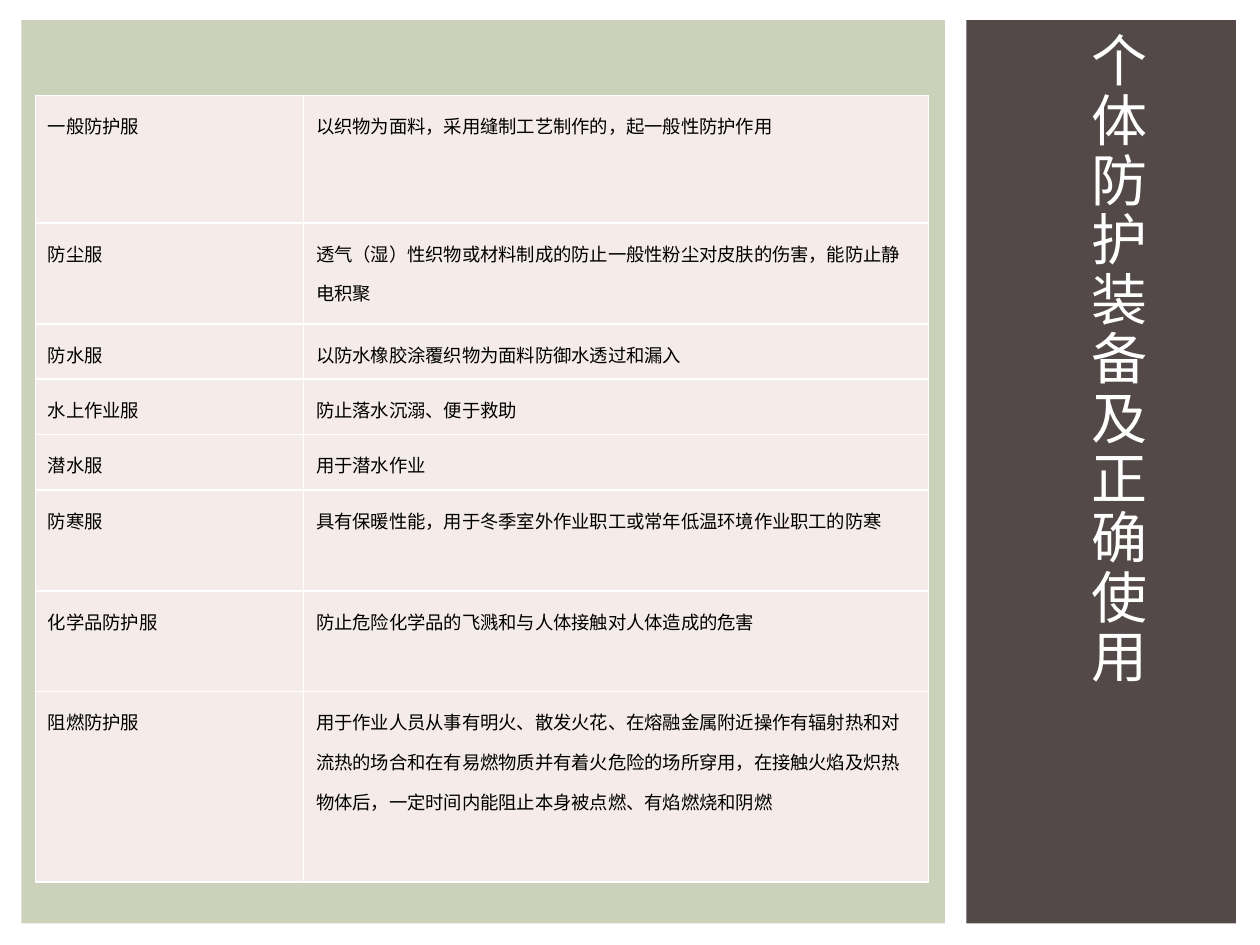
import pptx
import pptx.dml.color
import pptx.enum.shapes
import pptx.enum.text
import pptx.oxml
import pptx.oxml.ns
import pptx.util
from dataclasses import dataclass
from pptx.util import Inches


@dataclass(frozen=True)
class Theme:
    font: str = "Lato"
    title_size: float = 32
    cell_size: float = 10.5
    sage: str = "CCD1B9"
    brown: str = "534949"
    blush: str = "F5EBE9"
    white: str = "FFFFFF"
    black: str = "000000"


theme = Theme()


def rgb(value):
    return pptx.dml.color.RGBColor.from_string(value)


def add_borders(cell):
    """Draw a thin white line on all four sides, ahead of the cell's fill."""
    properties = cell._tc.get_or_add_tcPr()
    for index, side in enumerate(("lnL", "lnR", "lnT", "lnB")):
        properties.insert(index, pptx.oxml.parse_xml(
            f'<a:{side} {pptx.oxml.ns.nsdecls("a")} w="12700"><a:solidFill>'
            f'<a:srgbClr val="{theme.white}"/></a:solidFill></a:{side}>'))


clothing = [
    ("一般防护服", "以织物为面料，采用缝制工艺制作的，起一般性防护作用", 1.01),
    ("防尘服", "透气（湿）性织物或材料制成的防止一般性粉尘对皮肤的伤害，能防止静电积聚", 0.8),
    ("防水服", "以防水橡胶涂覆织物为面料防御水透过和漏入", 0.44),
    ("水上作业服", "防止落水沉溺、便于救助", 0.44),
    ("潜水服", "用于潜水作业", 0.44),
    ("防寒服", "具有保暖性能，用于冬季室外作业职工或常年低温环境作业职工的防寒", 0.8),
    ("化学品防护服", "防止危险化学品的飞溅和与人体接触对人体造成的危害", 0.8),
    ("阻燃防护服", "用于作业人员从事有明火、散发火花、在熔融金属附近操作有辐射热和对流热的场合"
     "和在有易燃物质并有着火危险的场所穿用，在接触火焰及炽热物体后，"
     "一定时间内能阻止本身被点燃、有焰燃烧和阴燃", 1.51),
]

deck = pptx.Presentation()
deck.slide_width, deck.slide_height = Inches(10), Inches(7.5)
slide = deck.slides.add_slide(deck.slide_layouts[5])

# Background panels
for left, width, color in ((0.17, 7.33, theme.sage), (7.67, 2.14, theme.brown)):
    panel = slide.shapes.add_shape(
        pptx.enum.shapes.MSO_SHAPE.RECTANGLE,
        Inches(left), Inches(0.16), Inches(width), Inches(7.17))
    panel.shadow.inherit = False
    panel.fill.solid()
    panel.fill.fore_color.rgb = rgb(color)
    panel.line.fill.background()

# Table of protective clothing
clothing_frame = slide.shapes.add_table(
    len(clothing), 2, Inches(0.28), Inches(0.76), Inches(7.09), Inches(6.25))
clothing_table = clothing_frame.table
clothing_table.first_row = False
clothing_table.horz_banding = False
for column, width in zip(clothing_table.columns, (2.13, 4.96)):
    column.width = Inches(width)

for row, (garment, purpose, height) in zip(clothing_table.rows, clothing):
    row.height = Inches(height)
    for cell, wording in zip(row.cells, (garment, purpose)):
        cell.text = wording
        cell.margin_left = cell.margin_right = Inches(0.1)
        cell.margin_top = cell.margin_bottom = Inches(0.03)
        cell.fill.solid()
        cell.fill.fore_color.rgb = rgb(theme.blush)
        add_borders(cell)
        paragraph = cell.text_frame.paragraphs[0]
        paragraph.line_spacing = 1.5
        paragraph.font.name = theme.font
        paragraph.font.size = pptx.util.Pt(theme.cell_size)
        paragraph.font.color.rgb = rgb(theme.black)

# Vertical title, brought in front of its panel
title = slide.shapes.title
slide.shapes._spTree.append(title._element)
title.left, title.top = Inches(7.68), Inches(0.21)
title.width, title.height = Inches(1.83), Inches(6.4)
title.text = "个体防护装备及正确使用"
title_frame = title.text_frame
title_frame.word_wrap = True
title_frame.auto_size = pptx.enum.text.MSO_AUTO_SIZE.NONE
title_frame.vertical_anchor = pptx.enum.text.MSO_ANCHOR.MIDDLE
title_frame.margin_left = Inches(0.65)
title_frame.margin_right = Inches(0.1)
title_frame._txBody.bodyPr.set("vert", "eaVert")
heading = title_frame.paragraphs[0]
heading.alignment = pptx.enum.text.PP_ALIGN.LEFT
heading.font.name = theme.font
heading.font.size = pptx.util.Pt(theme.title_size)
heading.font.color.rgb = rgb(theme.white)
heading.runs[0].font._element.set("spc", "200")

deck.save("out.pptx")
